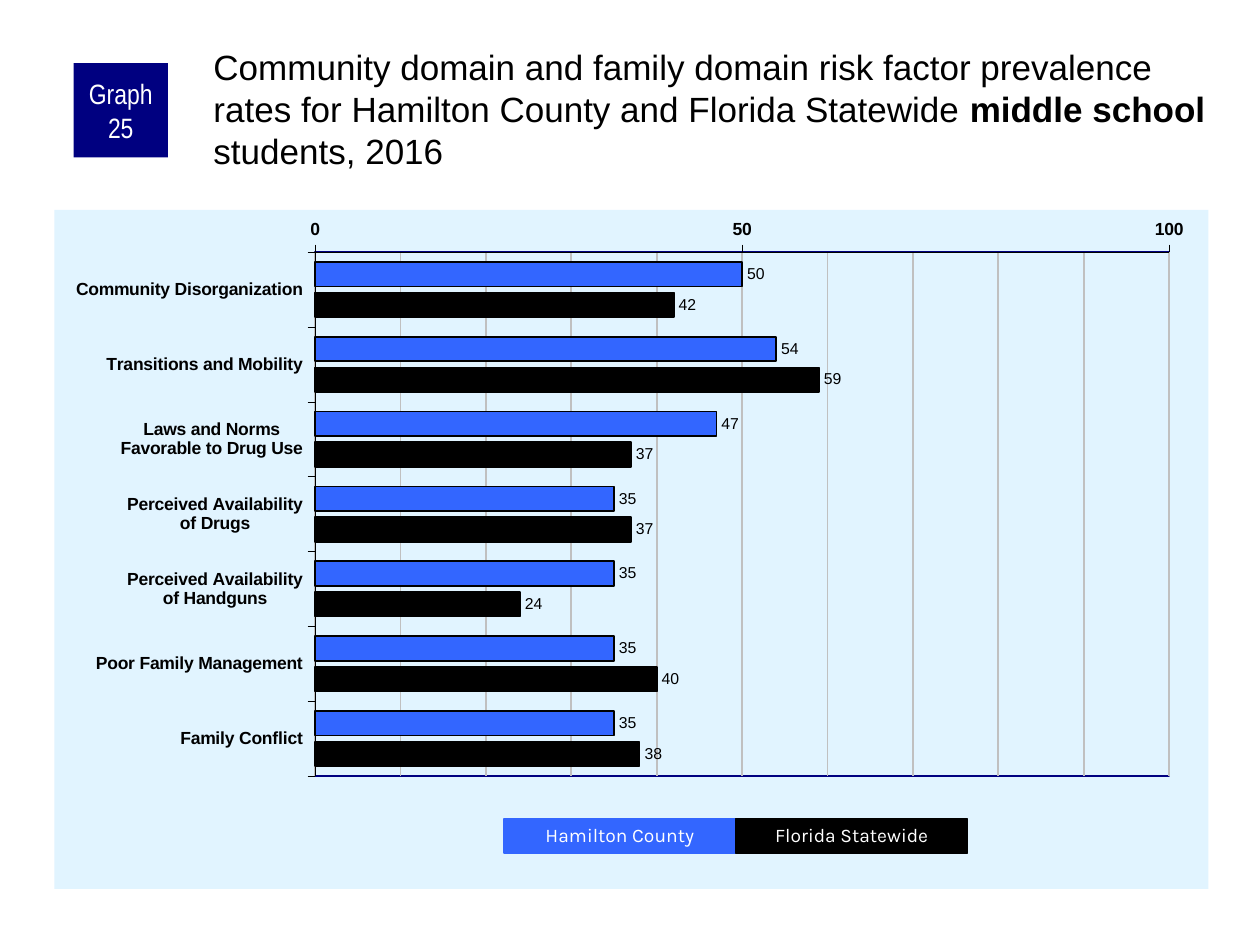
"""Build the middle school risk factor prevalence slide."""
import copy
import lxml.etree
import pptx
import pptx.chart.data
import pptx.dml.color
import pptx.enum.chart
import pptx.enum.shapes
import pptx.enum.text
import pptx.oxml
import pptx.oxml.ns
import pptx.util

Pt = pptx.util.Pt
qn = pptx.oxml.ns.qn

HEADLINE = [
    ("Community domain and family domain risk factor prevalence rates "
     "for Hamilton County and Florida Statewide ", False),
    ("middle school", True),
    (" students, 2016", False),
]
RISK_FACTORS = [
    ("Community Disorganization", 50, 42),
    ("Transitions and Mobility", 54, 59),
    ("Laws and Norms\nFavorable to Drug Use", 47, 37),
    ("Perceived Availability\nof Drugs", 35, 37),
    ("Perceived Availability\nof Handguns", 35, 24),
    ("Poor Family Management", 35, 40),
    ("Family Conflict", 35, 38),
]
REGIONS = [("Hamilton County", "3366FF"), ("Florida Statewide", "000000")]
NAVY, PALE_BLUE, GRAY, BLACK, WHITE = "000080", "E1F4FF", "C0C0C0", "000000", "FFFFFF"
PLOT_AREA = {"x": 0.226, "y": 0.062, "w": 0.74, "h": 0.772}
KEY_LEFT, KEY_TOP, KEY_WIDTH, KEY_HEIGHT = 288, 468, 132.5, 19.5


def color(hex_value):
    return pptx.dml.color.RGBColor.from_string(hex_value)


def style_font(font, size, hex_value, name="Arial", bold=False):
    font.size, font.name, font.bold = Pt(size), name, bold
    font.color.rgb = color(hex_value)


def style_line(line, hex_value, width):
    line.color.rgb = color(hex_value)
    line.width = Pt(width)


def add_block(slide, box, text, fill, size, font_name):
    block = slide.shapes.add_shape(
        pptx.enum.shapes.MSO_SHAPE.RECTANGLE, *(Pt(v) for v in box))
    block.shadow.inherit = False
    block.fill.solid()
    block.fill.fore_color.rgb = color(fill)
    block.line.fill.background()
    frame = block.text_frame
    frame.word_wrap = True
    frame.vertical_anchor = pptx.enum.text.MSO_ANCHOR.MIDDLE
    frame.text = text
    frame.paragraphs[0].alignment = pptx.enum.text.PP_ALIGN.CENTER
    style_font(frame.paragraphs[0].runs[0].font, size, WHITE, font_name)
    return block


def chart_area_format(contents):
    return pptx.oxml.parse_xml(
        '<c:spPr xmlns:c="http://schemas.openxmlformats.org/drawingml/2006/chart" '
        'xmlns:a="http://schemas.openxmlformats.org/drawingml/2006/main">'
        f"{contents}</c:spPr>")


def set_areas(chart):
    plot_area = chart.element.find(f".//{qn('c:plotArea')}")
    for old_layout in plot_area.findall(qn("c:layout")):
        plot_area.remove(old_layout)
    layout = lxml.etree.Element(qn("c:layout"))
    manual = lxml.etree.SubElement(layout, qn("c:manualLayout"))
    settings = {"layoutTarget": "inner", "xMode": "edge", "yMode": "edge", **PLOT_AREA}
    for tag, value in settings.items():
        lxml.etree.SubElement(manual, qn(f"c:{tag}")).set("val", str(value))
    plot_area.insert(0, layout)
    plot_area.append(chart_area_format(
        f'<a:noFill/><a:ln w="12700"><a:solidFill><a:srgbClr val="{NAVY}"/>'
        "</a:solidFill></a:ln>"))
    chart.element.find(qn("c:chart")).addnext(chart_area_format(
        f'<a:solidFill><a:srgbClr val="{PALE_BLUE}"/></a:solidFill>'
        "<a:ln><a:noFill/></a:ln>"))


def add_risk_chart(slide):
    names, *rates = zip(*RISK_FACTORS)
    data = pptx.chart.data.CategoryChartData()
    data.categories = names
    for number, values in enumerate(rates, 1):
        data.add_series(f"Series {number}", values)
    chart = slide.shapes.add_chart(
        pptx.enum.chart.XL_CHART_TYPE.BAR_CLUSTERED,
        Pt(31), Pt(120), Pt(659.5), Pt(388), data).chart
    chart.has_legend = chart.has_title = False
    style_font(chart.font, 11.8, BLACK)
    set_areas(chart)

    factors, percent = chart.category_axis, chart.value_axis
    for axis in (factors, percent):
        style_font(axis.tick_labels.font, 10, BLACK, bold=True)
        style_line(axis.format.line, BLACK, 0.25)
        axis.major_tick_mark = pptx.enum.chart.XL_TICK_MARK.OUTSIDE
    factors.reverse_order = True
    factors.crosses = pptx.enum.chart.XL_AXIS_CROSSES.MAXIMUM
    percent.minimum_scale, percent.maximum_scale = 0, 100
    percent.major_unit, percent.minor_unit = 50, 10
    percent.has_major_gridlines = percent.has_minor_gridlines = True
    style_line(percent.major_gridlines.format.line, GRAY, 1)
    major, minor = (chart.element.find(f".//{qn('c:valAx')}/{qn(tag)}")
                    for tag in ("c:majorGridlines", "c:minorGridlines"))
    minor.append(copy.deepcopy(major.find(qn("c:spPr"))))

    bars = chart.plots[0]
    bars.gap_width, bars.overlap, bars.vary_by_categories = 80, -25, False
    for region, (_, fill) in zip(bars.series, REGIONS):
        region.format.fill.solid()
        region.format.fill.fore_color.rgb = color(fill)
        style_line(region.format.line, BLACK, 1)
        labels = region.data_labels
        labels.show_value = True
        labels.position = pptx.enum.chart.XL_LABEL_POSITION.OUTSIDE_END
        style_font(labels.font, 9, BLACK)


def add_headline(slide):
    headline = slide.shapes.add_textbox(Pt(120), Pt(24), Pt(570), Pt(60)).text_frame
    headline.word_wrap = True
    headline.margin_left = headline.margin_top = Pt(2)
    headline.margin_right = headline.margin_bottom = 0
    for text, bold in HEADLINE:
        run = headline.paragraphs[0].add_run()
        run.text = text
        style_font(run.font, 20, BLACK, bold=bold)


def main():
    deck = pptx.Presentation()
    deck.slide_width, deck.slide_height = Pt(720), Pt(540)
    slide = deck.slides.add_slide(deck.slide_layouts[6])
    add_risk_chart(slide)
    badge = add_block(slide, (42, 36, 54, 54), "Graph 25", NAVY, 16, "Arial Narrow")
    badge.text_frame.margin_left = badge.text_frame.margin_right = Pt(3.6)
    badge.text_frame.margin_top = badge.text_frame.margin_bottom = 0
    add_headline(slide)
    for index, (region, fill) in enumerate(REGIONS):
        box = (KEY_LEFT + index * KEY_WIDTH, KEY_TOP, KEY_WIDTH, KEY_HEIGHT)
        key = add_block(slide, box, region, fill, 11, "Karla")
        style_line(key.line, fill, 0.75)
        key.text_frame.paragraphs[0].line_spacing = 0.9
    deck.save("out.pptx")


if __name__ == "__main__":
    main()
